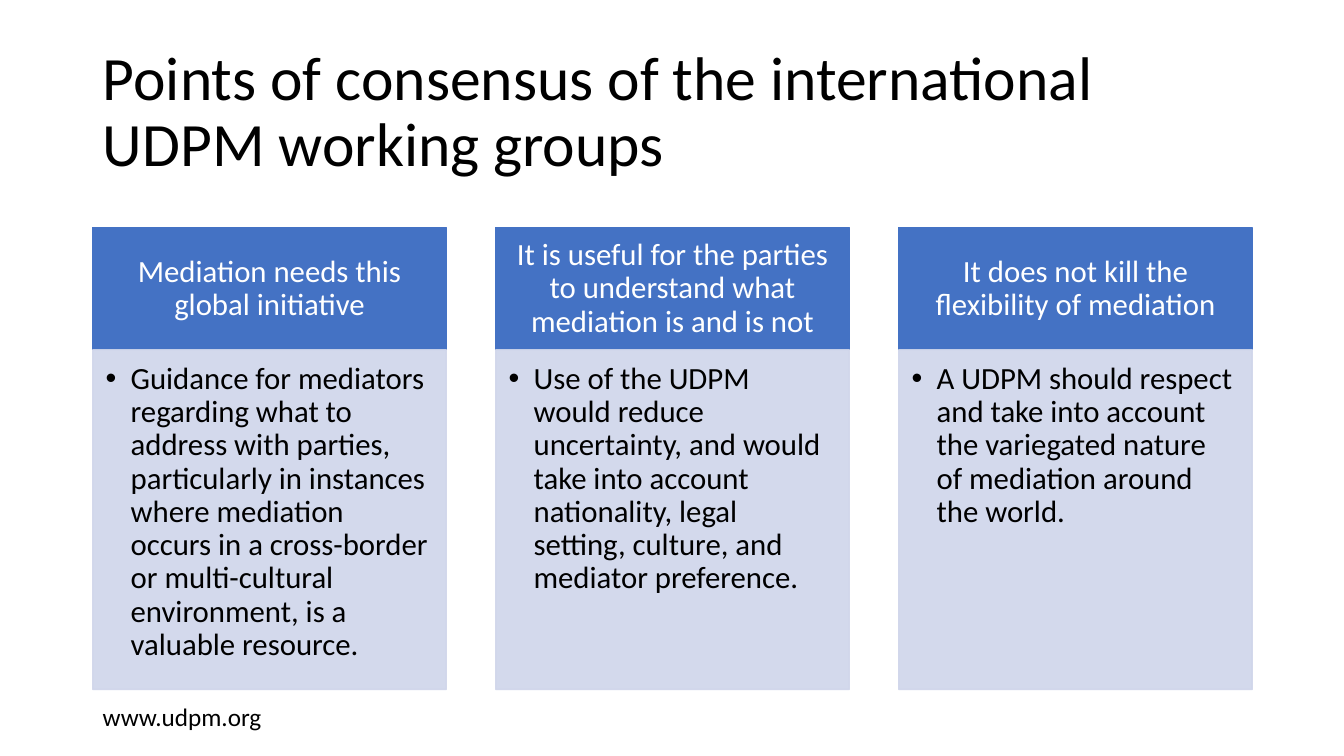
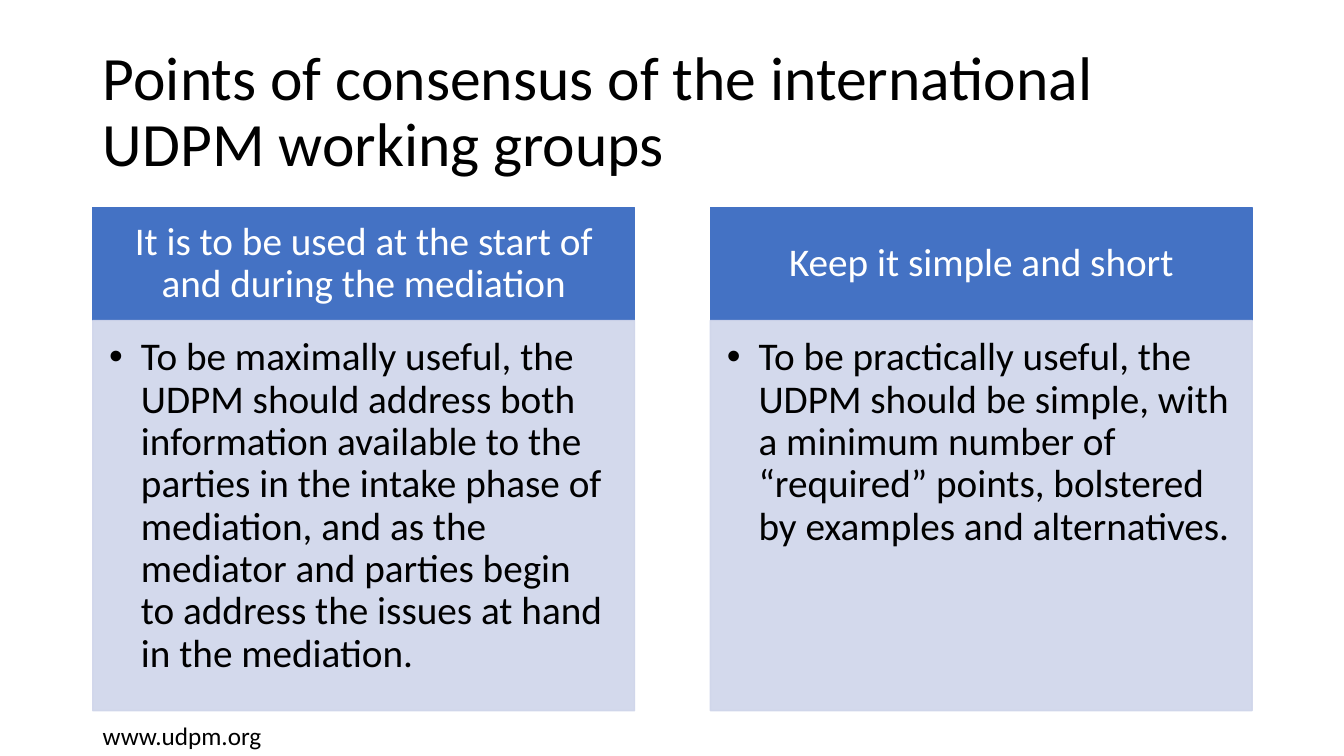
from lxml.etree import SubElement
from pptx import Presentation
from pptx.dml.color import RGBColor
from pptx.enum.shapes import MSO_SHAPE
from pptx.enum.text import MSO_ANCHOR, MSO_AUTO_SIZE, PP_ALIGN
from pptx.oxml.ns import qn
from pptx.util import Inches, Pt

TITLE = "Points of consensus of the international UDPM working groups"
FOOTER = "www.udpm.org"
SLIDES = [
    {
        "size": 22, "top": 2.26, "header": 1.21, "body": 3.37, "footer": 6.91,
        "columns": [
            ("Mediation needs this global initiative",
             "Guidance for mediators regarding what to address with parties, "
             "particularly in instances where mediation occurs in a cross-border "
             "or multi-cultural environment, is a valuable resource."),
            ("It is useful for the parties to understand what mediation is and is not",
             "Use of the UDPM would reduce uncertainty, and would take into account "
             "nationality, legal setting, culture, and mediator preference."),
            ("It does not kill the flexibility of mediation",
             "A UDPM should respect and take into account the variegated nature "
             "of mediation around the world."),
        ],
    },
    {
        "size": 28, "top": 2.06, "header": 1.12, "body": 3.87, "footer": 7.1,
        "columns": [
            ("It is to be used at the start of and during the mediation",
             "To be maximally useful, the UDPM should address both information "
             "available to the parties in the intake phase of mediation, and as the "
             "mediator and parties begin to address the issues at hand in the mediation."),
            ("Keep it simple and short",
             "To be practically useful, the UDPM should be simple, with a minimum "
             "number of “required” points, bolstered by examples and alternatives."),
        ],
    },
]

FONT = "Calibri"
BLUE, PALE, WHITE, BLACK = "4472C4", "CFD5EA", "FFFFFF", "000000"
LEFT, CONTENT_WIDTH = 0.92, 11.5
GAP_SHARE = 0.14  # gap between columns, as a share of a column's width
# Left, top, right and bottom insets, and bullet indent, as shares of the text size
HEADER_INSETS = (0.56, 0.32, 0.56, 0.32)
BODY_INSETS = (0.42, 0.42, 0.56, 0.63)
BULLET_INDENT = 0.81


def color(value):
    return RGBColor.from_string(value)


def write(frame, text, size, text_color, align=PP_ALIGN.LEFT, spacing=0.9):
    paragraph = frame.paragraphs[0]
    paragraph.alignment = align
    paragraph.line_spacing = spacing
    run = paragraph.add_run()
    run.text = text
    run.font.name = FONT
    run.font.size = Pt(size)
    run.font.color.rgb = color(text_color)
    return paragraph


def add_bullet(paragraph, indent):
    properties = paragraph._p.get_or_add_pPr()
    properties.set("marL", str(indent))
    properties.set("indent", str(-indent))
    SubElement(properties, qn("a:buFont"), typeface="Arial")
    SubElement(properties, qn("a:buChar"), char="•")


def add_panel(slide, box, fill, size, insets, anchor, alpha=100):
    """Add a filled rectangle and return its empty text frame."""
    shape = slide.shapes.add_shape(MSO_SHAPE.RECTANGLE, *map(Inches, box))
    shape.shadow.inherit = False
    shape.line.width = Pt(1)
    shape.fill.solid()
    for paint in (shape.fill, shape.line.fill):
        paint.solid()
        paint.fore_color.rgb = color(fill)
    if alpha < 100:
        for solid in shape._element.spPr.iter(qn("a:srgbClr")):
            SubElement(solid, qn("a:alpha"), val=str(alpha * 1000))
    frame = shape.text_frame
    frame.word_wrap = True
    frame.vertical_anchor = anchor
    (frame.margin_left, frame.margin_top,
     frame.margin_right, frame.margin_bottom) = [Pt(size * share) for share in insets]
    return frame


def add_columns(slide, content):
    size, top = content["size"], content["top"]
    header_height, body_height = content["header"], content["body"]
    count = len(content["columns"])
    width = CONTENT_WIDTH / (count + GAP_SHARE * (count - 1))
    for index, (heading, point) in enumerate(content["columns"]):
        left = LEFT + index * width * (1 + GAP_SHARE)
        header = add_panel(slide, (left, top, width, header_height),
                           BLUE, size, HEADER_INSETS, MSO_ANCHOR.MIDDLE)
        write(header, heading, size, WHITE, PP_ALIGN.CENTER)
        body = add_panel(slide, (left, top + header_height, width, body_height),
                         PALE, size, BODY_INSETS, MSO_ANCHOR.TOP, alpha=90)
        add_bullet(write(body, point, size, BLACK), Pt(size * BULLET_INDENT))


def add_title(slide):
    title = slide.shapes.title
    title.left, title.top = Inches(LEFT), Inches(0.4)
    title.width, title.height = Inches(CONTENT_WIDTH), Inches(1.45)
    frame = title.text_frame
    frame.auto_size = MSO_AUTO_SIZE.NONE
    frame.vertical_anchor = MSO_ANCHOR.MIDDLE
    write(frame, TITLE, 44, BLACK)


def add_footer(slide, top):
    box = slide.shapes.add_textbox(Inches(LEFT), Inches(top), Inches(1.79), Inches(0.4))
    box.text_frame.word_wrap = False
    box.text_frame.auto_size = MSO_AUTO_SIZE.SHAPE_TO_FIT_TEXT
    write(box.text_frame, FOOTER, 18, BLACK, spacing=1.0)


def main():
    presentation = Presentation()
    presentation.slide_width = Inches(13.33)
    presentation.slide_height = Inches(7.5)
    title_only = presentation.slide_layouts[5]
    for content in SLIDES:
        slide = presentation.slides.add_slide(title_only)
        add_title(slide)
        add_columns(slide, content)
        add_footer(slide, content["footer"])
    presentation.save("out.pptx")


if __name__ == "__main__":
    main()
